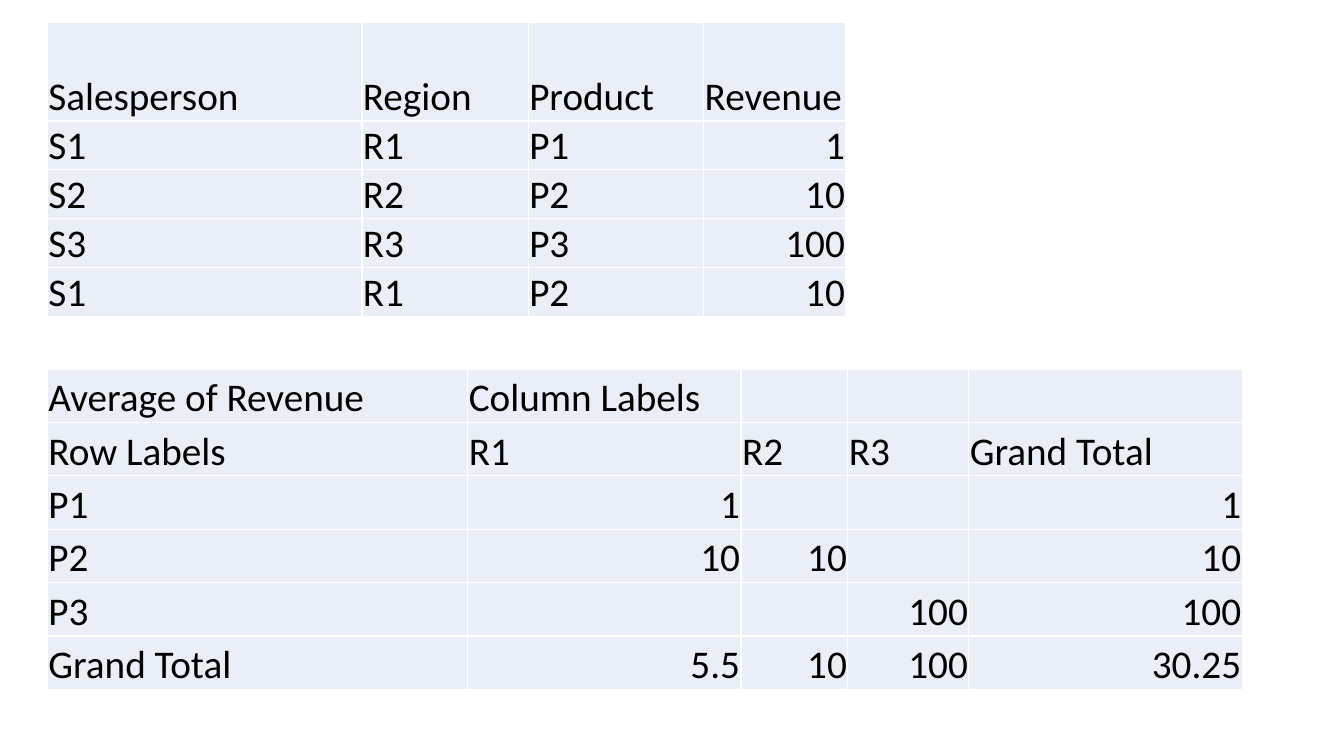
from dataclasses import dataclass

from lxml.etree import SubElement
from pptx import Presentation
from pptx.dml.color import RGBColor
from pptx.enum.text import MSO_ANCHOR, PP_ALIGN
from pptx.oxml.ns import qn
from pptx.util import Inches, Pt

BLACK = RGBColor(0x00, 0x00, 0x00)
WHITE = RGBColor(0xFF, 0xFF, 0xFF)
PALE = RGBColor(0xEA, 0xEF, 0xF7)
FONT = "Calibri"
LEFT = 0.47


@dataclass
class Grid:
    top: float
    widths: list[float]
    heights: list[float]
    rows: list[list[str]]


# Source data and the pivot built from it
SALES = Grid(
    0.22, [3.12, 1.65, 1.74, 1.41], [0.98] + [0.48] * 4,
    [
        ["Salesperson", "Region", "Product", "Revenue"],
        ["S1", "R1", "P1", "1"],
        ["S2", "R2", "P2", "10"],
        ["S3", "R3", "P3", "100"],
        ["S1", "R1", "P2", "10"],
    ],
)
PIVOT = Grid(
    3.66, [4.17, 2.71, 1.06, 1.2, 2.71], [0.53] * 6,
    [
        ["Average of Revenue", "Column Labels", "", "", ""],
        ["Row Labels", "R1", "R2", "R3", "Grand Total"],
        ["P1", "1", "", "", "1"],
        ["P2", "10", "10", "", "10"],
        ["P3", "", "", "100", "100"],
        ["Grand Total", "5.5", "10", "100", "30.25"],
    ],
)


def add_edges(cell) -> None:
    """Rule all four sides of a cell in thin white."""
    props = cell._tc.get_or_add_tcPr()
    for side in ("lnL", "lnR", "lnT", "lnB"):
        line = SubElement(props, qn(f"a:{side}"), w=str(Pt(1)))
        fill = SubElement(line, qn("a:solidFill"))
        SubElement(fill, qn("a:srgbClr"), val=str(WHITE))


def fill_cell(cell, text: str) -> None:
    add_edges(cell)
    cell.fill.solid()
    cell.fill.fore_color.rgb = PALE
    cell.vertical_anchor = MSO_ANCHOR.BOTTOM
    cell.margin_left = cell.margin_right = cell.margin_top = Inches(0.01)
    cell.margin_bottom = 0
    if not text:
        return
    para = cell.text_frame.paragraphs[0]
    # Numbers sit on the right, labels on the left
    is_num = text.replace(".", "").isdigit()
    para.alignment = PP_ALIGN.RIGHT if is_num else PP_ALIGN.LEFT
    run = para.add_run()
    run.text = text
    run.font.name = FONT
    run.font.size = Pt(28)
    run.font.color.rgb = BLACK


def add_grid(slide, grid: Grid) -> None:
    table = slide.shapes.add_table(
        len(grid.rows), len(grid.widths), Inches(LEFT), Inches(grid.top),
        Inches(sum(grid.widths)), Inches(sum(grid.heights))).table
    table.first_row = table.horz_banding = False
    for col, width in zip(table.columns, grid.widths):
        col.width = Inches(width)
    for row, height, texts in zip(table.rows, grid.heights, grid.rows):
        row.height = Inches(height)
        for cell, text in zip(row.cells, texts):
            fill_cell(cell, text)


def main() -> None:
    deck = Presentation()
    deck.slide_width, deck.slide_height = Inches(13.33), Inches(7.5)
    slide = deck.slides.add_slide(deck.slide_layouts[6])
    for grid in (SALES, PIVOT):
        add_grid(slide, grid)
    deck.save("out.pptx")


if __name__ == "__main__":
    main()
